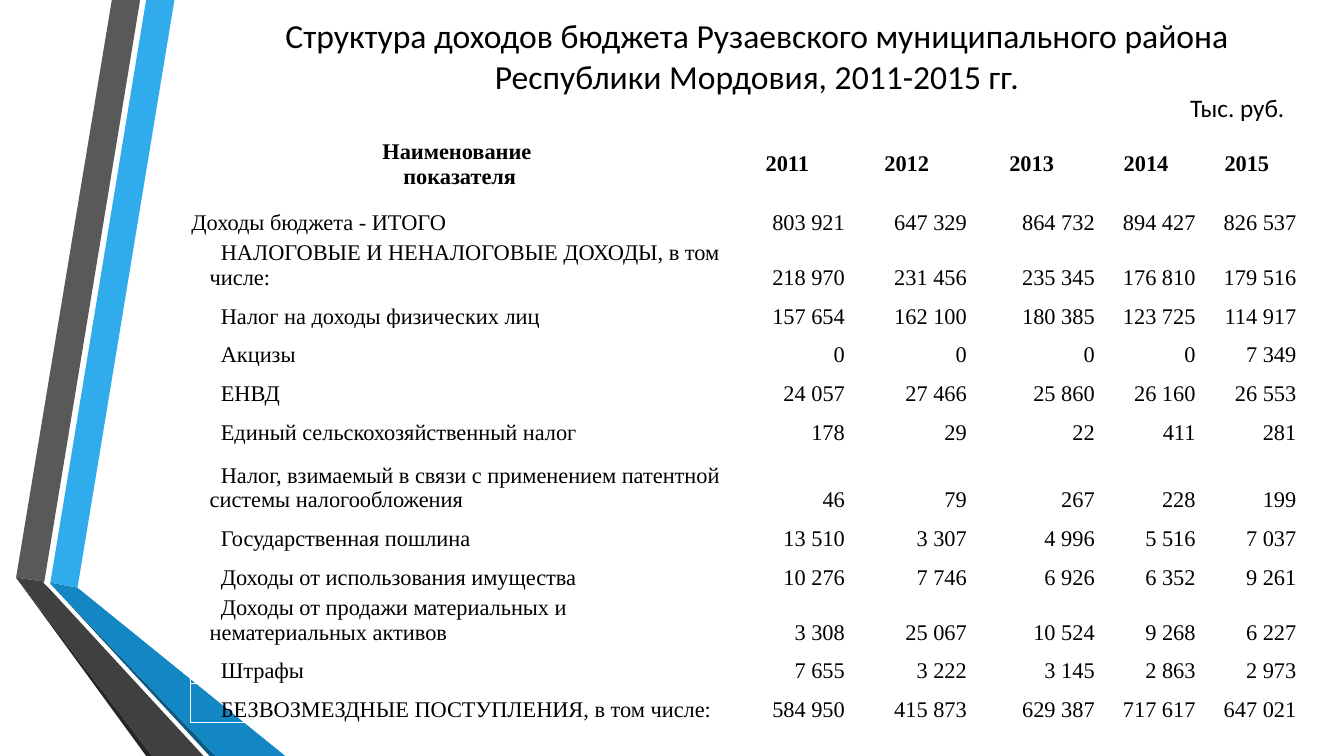
from lxml.etree import SubElement
from pptx import Presentation
from pptx.dml.color import RGBColor
from pptx.enum.text import MSO_ANCHOR, PP_ALIGN
from pptx.oxml.ns import qn
from pptx.util import Pt

RIBBONS = [
    ("30ACEC", [(36, 416.2), (55.4, 419.8), (124.6, 0), (104.4, 0)]),
    ("595959", [(100.1, 0), (79.9, 0), (11.5, 412.6), (31.7, 415.4)]),
    ("262626", [(11.5, 412.6), (104.4, 540), (108.7, 540)]),
    ("0C5A82", [(36, 416.9), (149.8, 540), (154.1, 540)]),
    ("1287C3", [(36, 416.9), (154.1, 540), (203.8, 540), (55.4, 419.8), (36, 416.2)]),
    ("404040", [(145.4, 540), (34.6, 419.8), (31, 416.2), (31.7, 415.4),
                (11.5, 412.6), (108.7, 540)]),
]
YEARS = ["2011", "2012", "2013", "2014", "2015"]
TOTAL = "Доходы бюджета - ИТОГО"
INCOME = [
    (TOTAL, 27.65, [803921, 647329, 864732, 894427, 826537]),
    ("НАЛОГОВЫЕ И НЕНАЛОГОВЫЕ ДОХОДЫ, в том числе:", 39.3,
     [218970, 231456, 235345, 176810, 179516]),
    ("Налог на доходы физических лиц", 27.65, [157654, 162100, 180385, 123725, 114917]),
    ("Акцизы", 27.65, [0, 0, 0, 0, 7349]),
    ("ЕНВД", 27.65, [24057, 27466, 25860, 26160, 26553]),
    ("Единый сельскохозяйственный налог", 27.65, [178, 29, 22, 411, 281]),
    ("Налог, взимаемый в связи с применением патентной системы налогообложения", 48.4,
     [46, 79, 267, 228, 199]),
    ("Государственная пошлина", 27.65, [13510, 3307, 4996, 5516, 7037]),
    ("Доходы от использования имущества", 27.65, [10276, 7746, 6926, 6352, 9261]),
    ("Доходы от продажи материальных и нематериальных активов", 39.3,
     [3308, 25067, 10524, 9268, 6227]),
    ("Штрафы", 27.65, [7655, 3222, 3145, 2863, 2973]),
    ("БЕЗВОЗМЕЗДНЫЕ ПОСТУПЛЕНИЯ, в том числе:", 27.65,
     [584950, 415873, 629387, 717617, 647021]),
]
COLUMN_WIDTHS = [384.6, 83.5, 87.1, 91.4, 72, 72]
HEADER_HEIGHT = 46.8


def color(value):
    """Turn a hex string into a colour."""
    return RGBColor.from_string(value)


def add_span(para, text, size, font, bold=False):
    """Append one black run to a paragraph."""
    span = para.add_run()
    span.text = text
    span.font.size = Pt(size)
    span.font.name = font
    span.font.bold = bold
    span.font.color.rgb = color("000000")


def add_ribbons(page, left, top):
    """Draw the folded ribbons from the given corner."""
    group = page.shapes.add_group_shape()
    for fill, points in RIBBONS:
        start, *rest = [(Pt(left + x), Pt(top + y)) for x, y in points]
        outline = group.shapes.build_freeform(*start, scale=1.0)
        outline.add_line_segments(rest, close=True)
        ribbon = outline.convert_to_shape()
        ribbon.shadow.inherit = False
        ribbon.fill.solid()
        ribbon.fill.fore_color.rgb = color(fill)
        ribbon.line.fill.background()


def add_caption(page, box, text, size, align, anchor, wrap):
    """Place a single-paragraph text box."""
    frame = page.shapes.add_textbox(*[Pt(length) for length in box]).text_frame
    frame.word_wrap = wrap
    frame.vertical_anchor = anchor
    para = frame.paragraphs[0]
    para.alignment = align
    add_span(para, text, size, "Calibri")


def add_borders(cell):
    """Give a cell thin white borders and no fill."""
    properties = cell._tc.get_or_add_tcPr()
    for side in ("a:lnL", "a:lnR", "a:lnT", "a:lnB"):
        border = SubElement(properties, qn(side), w=str(Pt(1)))
        paint = SubElement(border, qn("a:solidFill"))
        SubElement(paint, qn("a:srgbClr"), val="FFFFFF")
    cell.fill.background()


def fill_cell(cell, lines, align, anchor, bold=False, nested=False):
    """Write lines into a cell, indenting nested items."""
    add_borders(cell)
    cell.vertical_anchor = anchor
    cell.margin_left = Pt(13.7 if nested else 0.7)
    cell.margin_right = cell.margin_top = Pt(0.7)
    cell.margin_bottom = Pt(0)
    para = cell.text_frame.paragraphs[0]
    para.alignment = align
    if nested:
        para._p.get_or_add_pPr().set("indent", str(Pt(8)))
    for index, line in enumerate(lines):
        if index:
            para.add_line_break()
        add_span(para, line, 16, "Times New Roman", bold)


def add_income_table(page, left, top):
    """Build the table of income by year."""
    heights = [HEADER_HEIGHT] + [height for _, height, _ in INCOME]
    table = page.shapes.add_table(
        len(heights), len(COLUMN_WIDTHS), Pt(left), Pt(top),
        Pt(sum(COLUMN_WIDTHS)), Pt(sum(heights))).table
    table.first_row = table.horz_banding = False
    for column, width in zip(table.columns, COLUMN_WIDTHS):
        column.width = Pt(width)
    for row, height in zip(table.rows, heights):
        row.height = Pt(height)
    headings = [["Наименование ", "показателя"]] + [[year] for year in YEARS]
    for column, lines in enumerate(headings):
        fill_cell(table.cell(0, column), lines, PP_ALIGN.CENTER, MSO_ANCHOR.MIDDLE, bold=True)
    for row, (name, _, amounts) in enumerate(INCOME, 1):
        fill_cell(table.cell(row, 0), [name], PP_ALIGN.LEFT, MSO_ANCHOR.BOTTOM,
                  nested=name != TOTAL)
        for column, amount in enumerate(amounts, 1):
            text = f"{amount:,}".replace(",", " ")
            fill_cell(table.cell(row, column), [text], PP_ALIGN.RIGHT, MSO_ANCHOR.BOTTOM)


def main():
    """Assemble and save the slide."""
    deck = Presentation()
    deck.slide_width, deck.slide_height = Pt(960), Pt(540)
    page = deck.slides.add_slide(deck.slide_layouts[6])
    add_ribbons(page, 0, 0)
    add_caption(page, (136.1, 9.4, 809.3, 60.5),
                "Структура доходов бюджета Рузаевского муниципального района "
                "Республики Мордовия, 2011-2015 гг.",
                24, PP_ALIGN.CENTER, MSO_ANCHOR.MIDDLE, True)
    add_caption(page, (843.1, 62.6, 84.2, 28.8), "Тыс. руб.",
                18, PP_ALIGN.LEFT, MSO_ANCHOR.TOP, False)
    add_income_table(page, 136.1, 93.6)
    deck.save("out.pptx")


if __name__ == "__main__":
    main()
